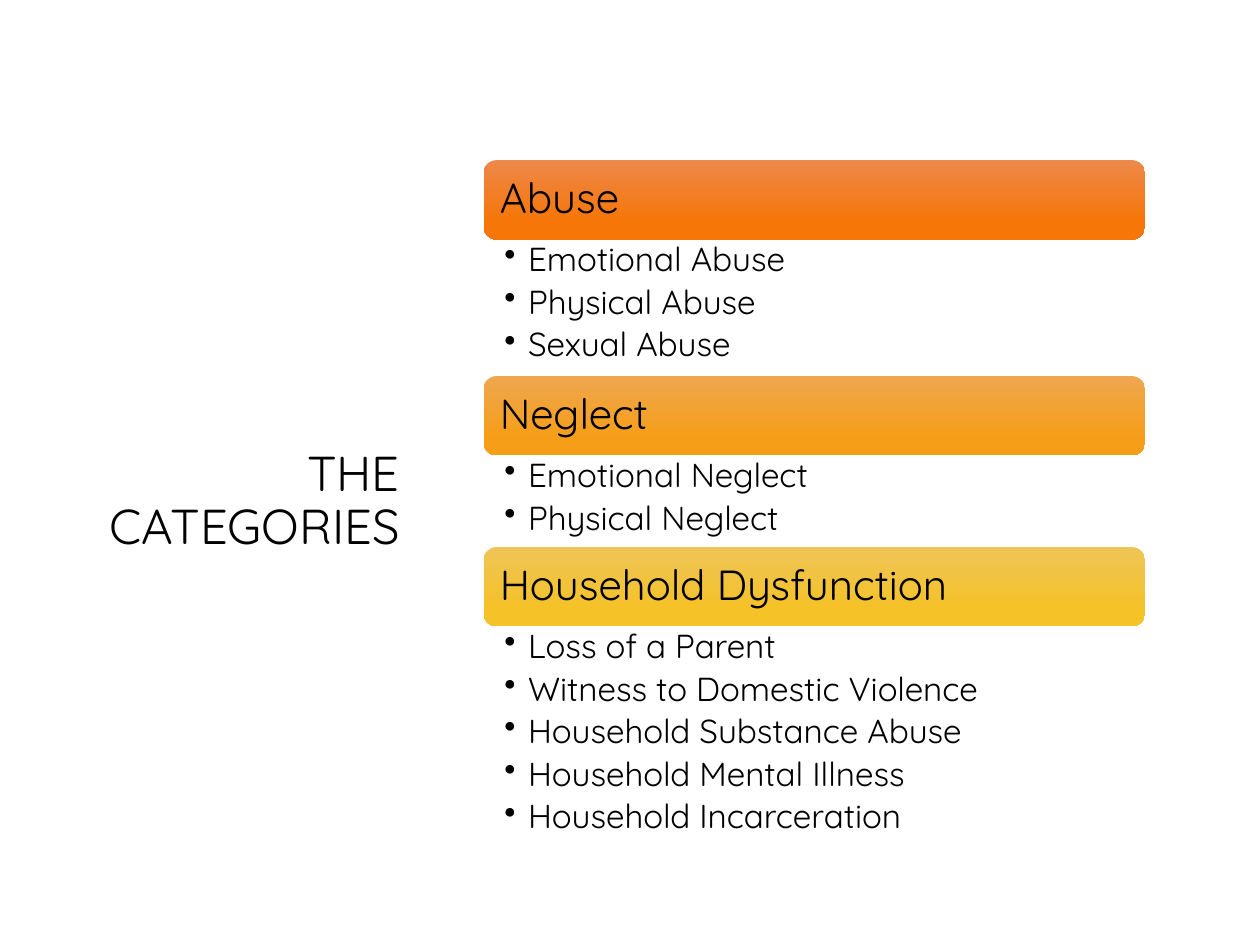
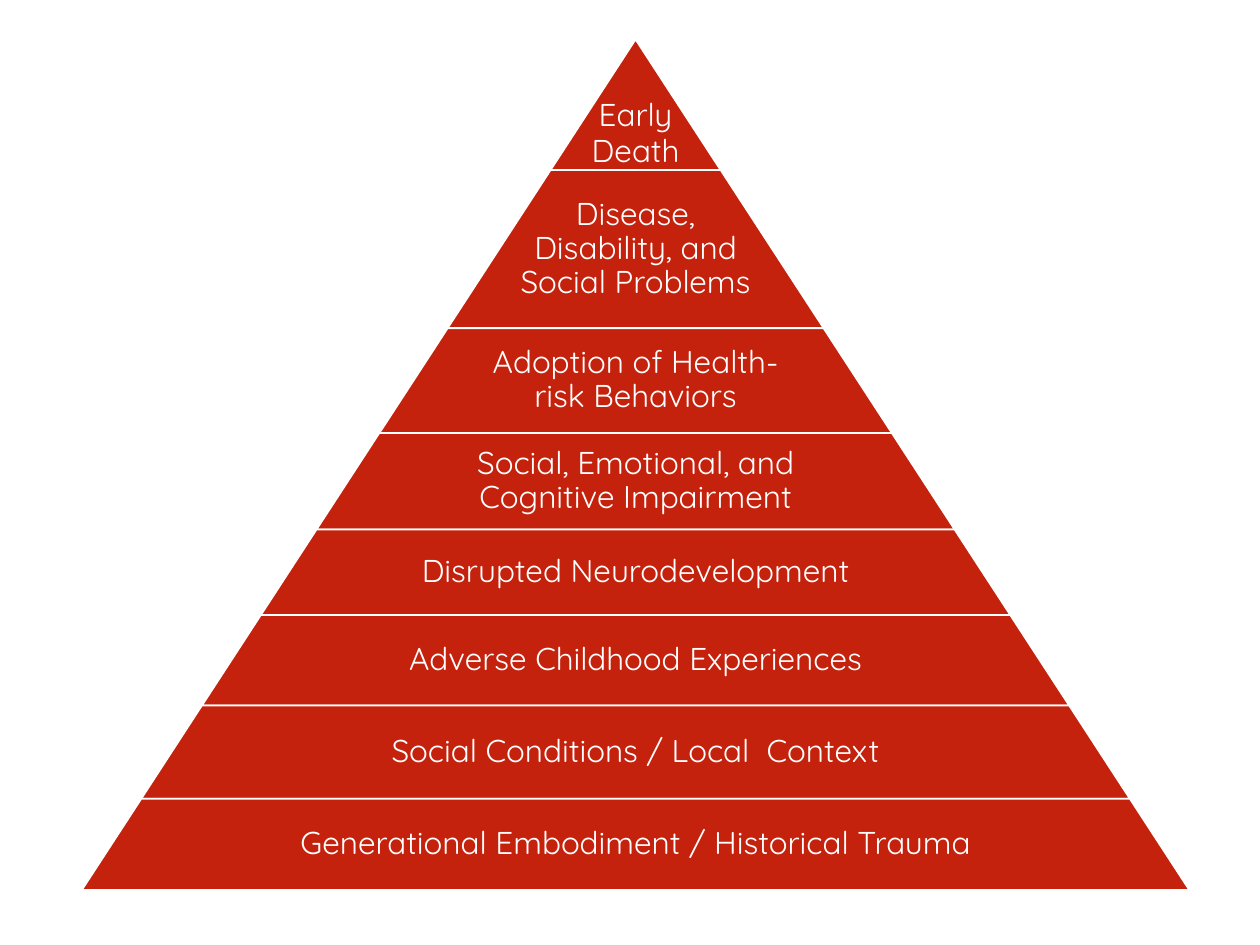
from itertools import pairwise

from lxml.etree import SubElement
from pptx import Presentation
from pptx.dml.color import RGBColor
from pptx.enum.shapes import MSO_SHAPE
from pptx.enum.text import MSO_ANCHOR, PP_ALIGN
from pptx.oxml.ns import qn
from pptx.util import Pt

FONT = "Quicksand"
COLORS = {
    "text": "000000", "white": "FFFFFF", "tier": "C4220D",
    "abuse": ("ED884B", "F67607"),
    "neglect": ("EEA750", "F69E17"),
    "household": ("EEC457", "F5C228"),
}


def rgb(value):
    return RGBColor.from_string(value)


def write(tf, text, size=18, color="text", align=PP_ALIGN.LEFT,
          anchor=MSO_ANCHOR.MIDDLE, insets=(7.2, 7.2, 7.2, 7.2),
          spacing=0.9, after=0, bullet_indent=None):
    """Fill a text frame, one paragraph for each line of text."""
    tf.word_wrap = True
    tf.vertical_anchor = anchor
    (tf.margin_left, tf.margin_top,
     tf.margin_right, tf.margin_bottom) = map(Pt, insets)
    for i, line in enumerate(text.split("\n")):
        p = tf.add_paragraph() if i else tf.paragraphs[0]
        p.alignment = align
        p.line_spacing = spacing
        p.space_after = Pt(after)
        if bullet_indent:
            pPr = p._p.get_or_add_pPr()
            pPr.set("marL", str(Pt(bullet_indent)))
            pPr.set("indent", str(-Pt(bullet_indent)))
            SubElement(pPr, qn("a:buChar")).set("char", "•")
        r = p.add_run()
        r.text = line
        r.font.name = FONT
        r.font.size = Pt(size)
        r.font.color.rgb = rgb(COLORS[color])


class Deck:
    def __init__(self, width, height):
        self.prs = Presentation()
        self.prs.slide_width, self.prs.slide_height = Pt(width), Pt(height)
        self.s = None

    def new_slide(self):
        self.s = self.prs.slides.add_slide(self.prs.slide_layouts[6])

    def text(self, box, text, **style):
        sp = self.s.shapes.add_textbox(*map(Pt, box))
        write(sp.text_frame, text, **style)

    def shape(self, kind, box):
        sp = self.s.shapes.add_shape(kind, *map(Pt, box))
        sp.shadow.inherit = False
        return sp

    def bar(self, box, text, gradient):
        sp = self.shape(MSO_SHAPE.ROUNDED_RECTANGLE, box)
        sp.line.fill.background()
        sp.fill.gradient()
        sp.fill.gradient_angle = 270
        stops = zip(sp.fill.gradient_stops, (0, 0.78), COLORS[gradient])
        for stop, position, color in stops:
            stop.position = position
            stop.color.rgb = rgb(color)
        write(sp.text_frame, text, size=24)

    def tier(self, box, slope):
        sp = self.shape(MSO_SHAPE.TRAPEZOID, box)
        sp.adjustments[0] = slope
        sp.fill.solid()
        sp.fill.fore_color.rgb = rgb(COLORS["tier"])
        sp.line.color.rgb = rgb(COLORS["white"])
        sp.line.width = Pt(1)


def categories_slide(deck):
    deck.new_slide()
    deck.text((40.3, 84.2, 195.1, 405.4), "THE CATEGORIES",
              size=28, align=PP_ALIGN.RIGHT)

    # Coloured bars, each followed by its bulleted list
    categories = [
        ("Abuse", "abuse",
         ["Emotional Abuse", "Physical Abuse", "Sexual Abuse"]),
        ("Neglect", "neglect", ["Emotional Neglect", "Physical Neglect"]),
        ("Household Dysfunction", "household",
         ["Loss of a Parent", "Witness to Domestic Violence",
          "Household Substance Abuse", "Household Mental Illness",
          "Household Incarceration"]),
    ]
    left, top, width, bar_height = 276.3, 91.5, 378, 45.4
    for heading, gradient, items in categories:
        deck.bar((left, top, width, bar_height), heading, gradient)
        top += bar_height
        list_height = 25.7 * len(items) + 0.9
        deck.text((left, top, width, list_height), "\n".join(items),
                  size=19, anchor=MSO_ANCHOR.TOP, after=3.8,
                  insets=(12, 2, 13.5, 2), bullet_indent=13.5)
        top += list_height


def pyramid_slide(deck):
    deck.new_slide()
    center, slope, text_share = 363.2, 0.651, 0.65
    edges = [22.5, 97.2, 187.5, 247.5, 302.6, 351.4, 403.2, 456.4, 508.6]
    labels = [
        "Early Death",
        "Disease, Disability, and Social Problems",
        "Adoption of Health-risk Behaviors",
        "Social, Emotional, and Cognitive Impairment",
        "Disrupted Neurodevelopment",
        "Adverse Childhood Experiences",
        "Social Conditions / Local  Context",
        "Generational Embodiment / Historical Trauma",
    ]

    # Tiers widen evenly from the apex; labels keep to the middle
    for label, (top, bottom) in zip(labels, pairwise(edges)):
        width = 2 * slope * (bottom - edges[0])
        height = bottom - top
        at_apex = top == edges[0]
        # The side slope is relative to the shorter side of the tier
        deck.tier((center - width / 2, top, width, height), slope)
        text_width = width * text_share
        deck.text((center - text_width / 2, top, text_width, height), label,
                  color="white", align=PP_ALIGN.CENTER,
                  anchor=MSO_ANCHOR.BOTTOM if at_apex else MSO_ANCHOR.MIDDLE,
                  insets=(2, 2, 2, 0 if at_apex else 2),
                  spacing=0.95 if at_apex else 0.9)


def main():
    deck = Deck(720, 540)
    categories_slide(deck)
    pyramid_slide(deck)
    deck.prs.save("out.pptx")


if __name__ == "__main__":
    main()
